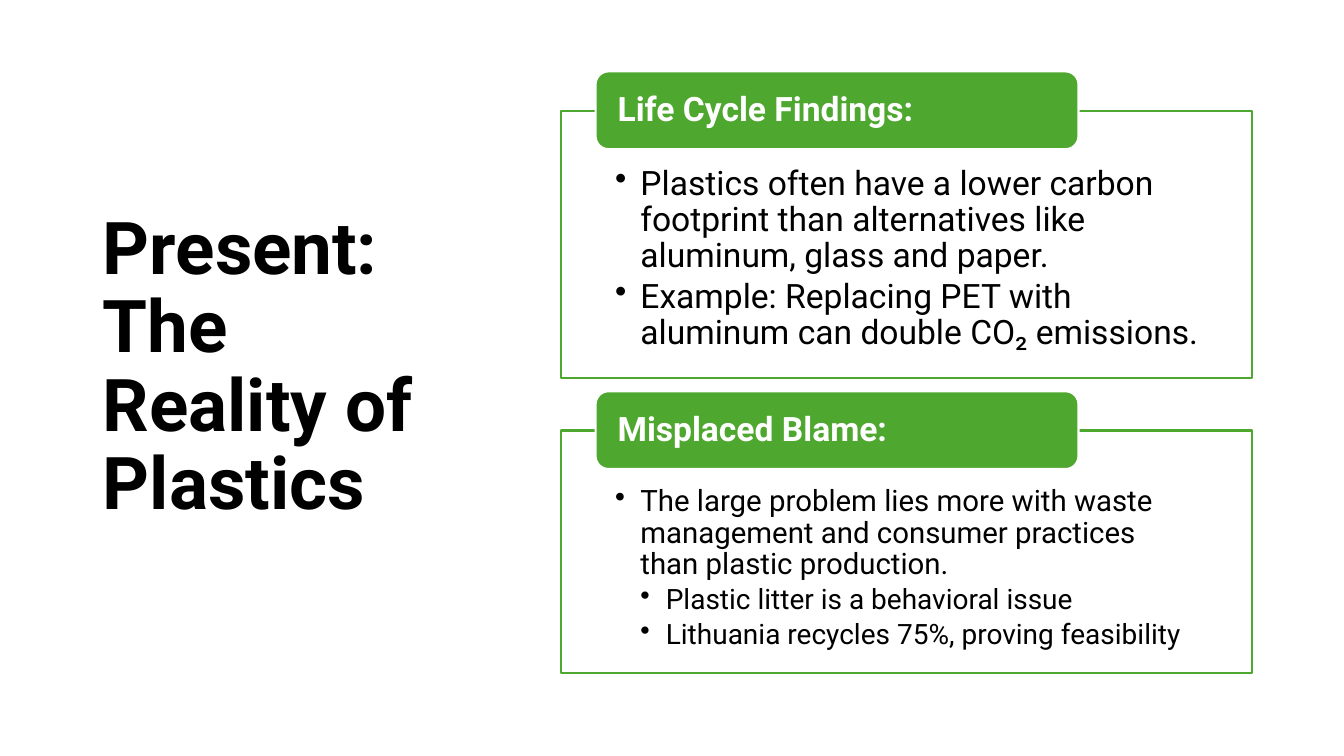
from lxml import etree
from pptx import Presentation
from pptx.dml.color import RGBColor
from pptx.enum.shapes import MSO_SHAPE
from pptx.enum.text import MSO_ANCHOR, MSO_AUTO_SIZE, PP_ALIGN
from pptx.oxml.ns import qn
from pptx.util import Cm, Pt

RECTANGLE, ROUNDED = MSO_SHAPE.RECTANGLE, MSO_SHAPE.ROUNDED_RECTANGLE
TOP, MIDDLE = MSO_ANCHOR.TOP, MSO_ANCHOR.MIDDLE
LEFT = PP_ALIGN.LEFT
NO_AUTOFIT = MSO_AUTO_SIZE.NONE
TITLE_ONLY = 5

FONT = "Roboto"
GREEN, WHITE, BLACK = "4EA72E", "FFFFFF", "000000"
INDENT = 0.64  # bullet step in cm

# Heading, top and height of the frame in cm, items as (level, size, text)
SECTIONS = [
    ("Life Cycle Findings:", 2.79, 6.73, [
        (1, 24, "Plastics often have a lower carbon footprint than "
                "alternatives like aluminum, glass and paper."),
        (1, 24, "Example: Replacing PET with aluminum can double CO₂ emissions."),
    ]),
    ("Misplaced Blame:", 10.85, 6.1, [
        (1, 21, "The large problem lies more with waste management and "
                "consumer practices than plastic production."),
        (2, 20, "Plastic litter is a behavioral issue"),
        (2, 20, "Lithuania recycles 75%, proving feasibility"),
    ]),
]


def color(hex_code):
    return RGBColor.from_string(hex_code)


def format_paragraph(para, text, size, hex_code, bold=False):
    para.text = text
    para.alignment = LEFT
    para.line_spacing = 0.9
    para.font.name = FONT
    para.font.size = Pt(size)
    para.font.bold = bold
    para.font.color.rgb = color(hex_code)


def add_bullet(para, level):
    properties = para._p.get_or_add_pPr()
    properties.set("marL", str(Cm(INDENT * level)))
    properties.set("indent", str(-Cm(INDENT)))
    etree.SubElement(properties, qn("a:buChar")).set("char", "•")


def add_box(slide, kind, left, top, width, height, fill, line, anchor, insets):
    box = slide.shapes.add_shape(kind, Cm(left), Cm(top), Cm(width), Cm(height))
    box.shadow.inherit = False
    box.fill.solid()
    box.fill.fore_color.rgb = color(fill)
    box.line.color.rgb = color(line)
    box.line.width = Pt(1.5)
    frame = box.text_frame
    frame.word_wrap = True
    frame.vertical_anchor = anchor
    side, above, below = insets
    frame.margin_left = frame.margin_right = Cm(side)
    frame.margin_top, frame.margin_bottom = Cm(above), Cm(below)
    return frame


def set_title(slide, text):
    title = slide.shapes.title
    title.left, title.top = Cm(2.34), Cm(1.55)
    title.width, title.height = Cm(9.37), Cm(15.47)
    frame = title.text_frame
    frame.auto_size = NO_AUTOFIT
    frame.word_wrap = True
    frame.vertical_anchor = MIDDLE
    format_paragraph(frame.paragraphs[0], text, 52, BLACK, bold=True)


def add_section(slide, heading, top, height, items):
    # Outlined frame with the bullets
    body = add_box(slide, RECTANGLE, 14.15, top, 17.4, height,
                   WHITE, GREEN, TOP, (1.35, 1.4, 0.45))
    for index, (level, size, text) in enumerate(items):
        para = body.add_paragraph() if index else body.paragraphs[0]
        format_paragraph(para, text, size, BLACK)
        para.level = level
        para.space_after = Pt(3)
        add_bullet(para, level)

    # Heading across the frame's top edge
    label = add_box(slide, ROUNDED, 15.01, top - 0.99, 12.17, 1.96,
                    GREEN, WHITE, MIDDLE, (0.46, 0, 0))
    format_paragraph(label.paragraphs[0], heading, 24, WHITE, bold=True)


def main():
    deck = Presentation()
    deck.slide_width, deck.slide_height = Cm(33.87), Cm(19.05)
    slide = deck.slides.add_slide(deck.slide_layouts[TITLE_ONLY])
    set_title(slide, "Present: The Reality of Plastics")
    for section in SECTIONS:
        add_section(slide, *section)
    deck.save("out.pptx")


if __name__ == "__main__":
    main()
